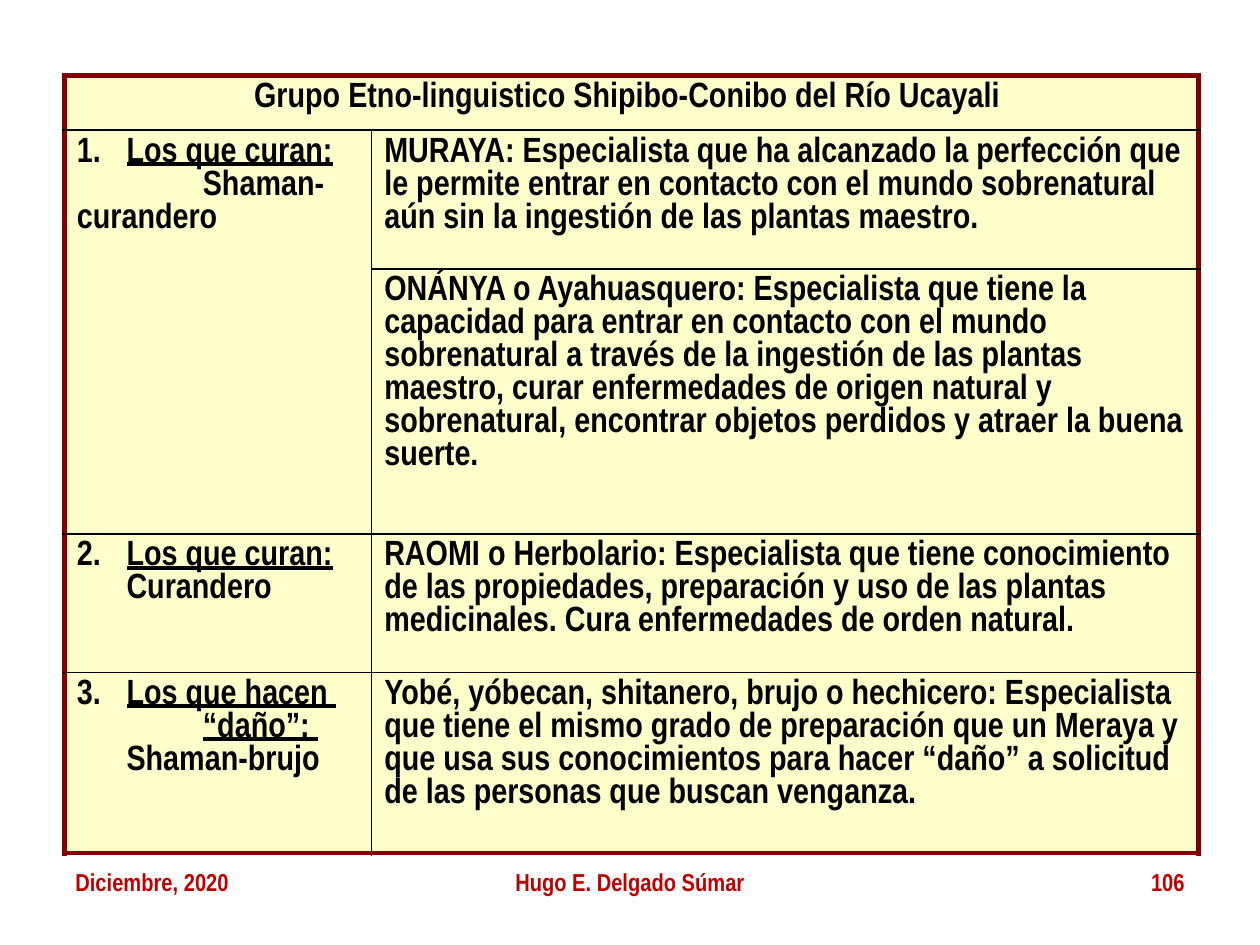
"""Build a slide with a table of Shipibo-Conibo healers."""
import pptx
import pptx.dml.color
import pptx.enum.text
import pptx.oxml
import pptx.oxml.ns
import pptx.util
from dataclasses import dataclass
from typing import Any

Pt = pptx.util.Pt
Align = pptx.enum.text.PP_ALIGN
FONT = "Arial Narrow"
BLACK, MAROON, CREAM, RED = "000000", "800000", "FFFFCC", "C00000"
WIDTHS = (175.7, 472.3)
HEIGHTS = (31.2, 79.2, 151.6, 79, 103.4)


@dataclass
class Run:
    text: str
    under: bool = False


@dataclass
class Para:
    runs: list[Run]
    hang: float = 0
    tab: float = 0
    align: Any = Align.LEFT


@dataclass
class Entry:
    row: int
    col: int
    paras: list[Para]


@dataclass
class Footer:
    left: float
    width: float
    text: str
    align: Any


def plain(text: str) -> list[Para]:
    return [Para([Run(text)])]


def item(mark: str, title: str) -> Para:
    return Para([Run(f"{mark}. \t"), Run(title, True)], 28.4)


ENTRIES = [
    Entry(0, 0, [Para([Run("Grupo Etno-linguistico Shipibo-Conibo del Río Ucayali ")],
                      align=Align.CENTER)]),
    Entry(1, 0, [item("1", "Los que curan:"),
                 Para([Run("\tShaman-curandero")], tab=72)]),
    Entry(1, 1, plain(
        "MURAYA: Especialista que ha alcanzado la perfección que le permite entrar en "
        "contacto con el mundo sobrenatural aún sin la ingestión de las plantas maestro.")),
    Entry(2, 1, plain(
        "ONÁNYA o Ayahuasquero: Especialista que tiene la capacidad para entrar en "
        "contacto con el mundo sobrenatural a través de la ingestión de las plantas "
        "maestro, curar enfermedades de origen natural y sobrenatural, encontrar "
        "objetos perdidos y atraer la buena suerte.")),
    Entry(3, 0, [item("2", "Los que curan:"), Para([Run("\tCurandero")], 28.4)]),
    Entry(3, 1, plain(
        "RAOMI o Herbolario: Especialista que tiene conocimiento de las propiedades, "
        "preparación y uso de las plantas medicinales. Cura enfermedades de orden natural.")),
    Entry(4, 0, [item("3", "Los que hacen "),
                 Para([Run("\t"), Run("“daño”: ", True)], tab=72),
                 Para([Run("\tShaman-brujo")], 28.4)]),
    Entry(4, 1, plain(
        "Yobé, yóbecan, shitanero, brujo o hechicero: Especialista que tiene el mismo "
        "grado de preparación que un Meraya y que usa sus conocimientos para hacer "
        "“daño” a solicitud de las personas que buscan venganza.")),
]
FOOTERS = [
    Footer(36, 168, "Diciembre, 2020", Align.LEFT),
    Footer(246, 228, "Hugo E. Delgado Súmar", Align.CENTER),
    Footer(516, 168, "106", Align.RIGHT),
]


def paint(target: Any, tint: str) -> None:
    target.rgb = pptx.dml.color.RGBColor.from_string(tint)


def write(frame: Any, paras: list[Para], size: float, tint: str) -> None:
    for i, para in enumerate(paras):
        line = frame.paragraphs[0] if i == 0 else frame.add_paragraph()
        line.alignment = para.align
        line.line_spacing = 1.0
        props = line._p.get_or_add_pPr()
        if para.hang:
            props.set("marL", str(Pt(para.hang)))
            props.set("indent", str(-Pt(para.hang)))
        if para.tab:
            space = pptx.oxml.ns.nsdecls("a")
            props.append(pptx.oxml.parse_xml(
                f'<a:tabLst {space}><a:tab pos="{Pt(para.tab)}" algn="l"/></a:tabLst>'))
        for part in para.runs:
            run = line.add_run()
            run.text = part.text
            font = run.font
            font.name, font.size, font.bold = FONT, Pt(size), True
            font.underline = part.under
            paint(font.color, tint)


def edge(cell: Any, sides: dict[str, bool]) -> None:
    props = cell._tc.get_or_add_tcPr()
    space = pptx.oxml.ns.nsdecls("a")
    for i, (side, outer) in enumerate(sides.items()):
        width, tint = (3, MAROON) if outer else (1, BLACK)
        props.insert(i, pptx.oxml.parse_xml(
            f'<a:ln{side} {space} w="{Pt(width)}"><a:solidFill>'
            f'<a:srgbClr val="{tint}"/></a:solidFill></a:ln{side}>'))


def draw_table(slide: Any) -> None:
    rows, cols = len(HEIGHTS), len(WIDTHS)
    frame = slide.shapes.add_table(rows, cols, Pt(36.7), Pt(43.2),
                                   Pt(sum(WIDTHS)), Pt(sum(HEIGHTS)))
    table = frame.table
    table.first_row = table.horz_banding = False
    for col, width in zip(table.columns, WIDTHS):
        col.width = Pt(width)
    for row, height in zip(table.rows, HEIGHTS):
        row.height = Pt(height)
    for r in range(rows):
        for c in range(cols):
            cell = table.cell(r, c)
            cell.fill.solid()
            paint(cell.fill.fore_color, CREAM)
            edge(cell, {"L": c == 0, "R": c == cols - 1 or r == 0,
                        "T": r == 0, "B": r == rows - 1})
    table.cell(0, 0).merge(table.cell(0, 1))
    table.cell(1, 0).merge(table.cell(2, 0))
    for entry in ENTRIES:
        cell = table.cell(entry.row, entry.col)
        write(cell.text_frame, entry.paras, 20, BLACK)


def draw_foot(slide: Any, foot: Footer) -> None:
    box = slide.shapes.add_textbox(Pt(foot.left), Pt(491.8), Pt(foot.width), Pt(37.4))
    box.text_frame.word_wrap = True
    write(box.text_frame, [Para([Run(foot.text)], align=foot.align)], 14, RED)


def main() -> None:
    deck = pptx.Presentation()
    deck.slide_width, deck.slide_height = Pt(720), Pt(540)
    slide = deck.slides.add_slide(deck.slide_layouts[6])
    draw_table(slide)
    for foot in FOOTERS:
        draw_foot(slide, foot)
    deck.save("out.pptx")


if __name__ == "__main__":
    main()
